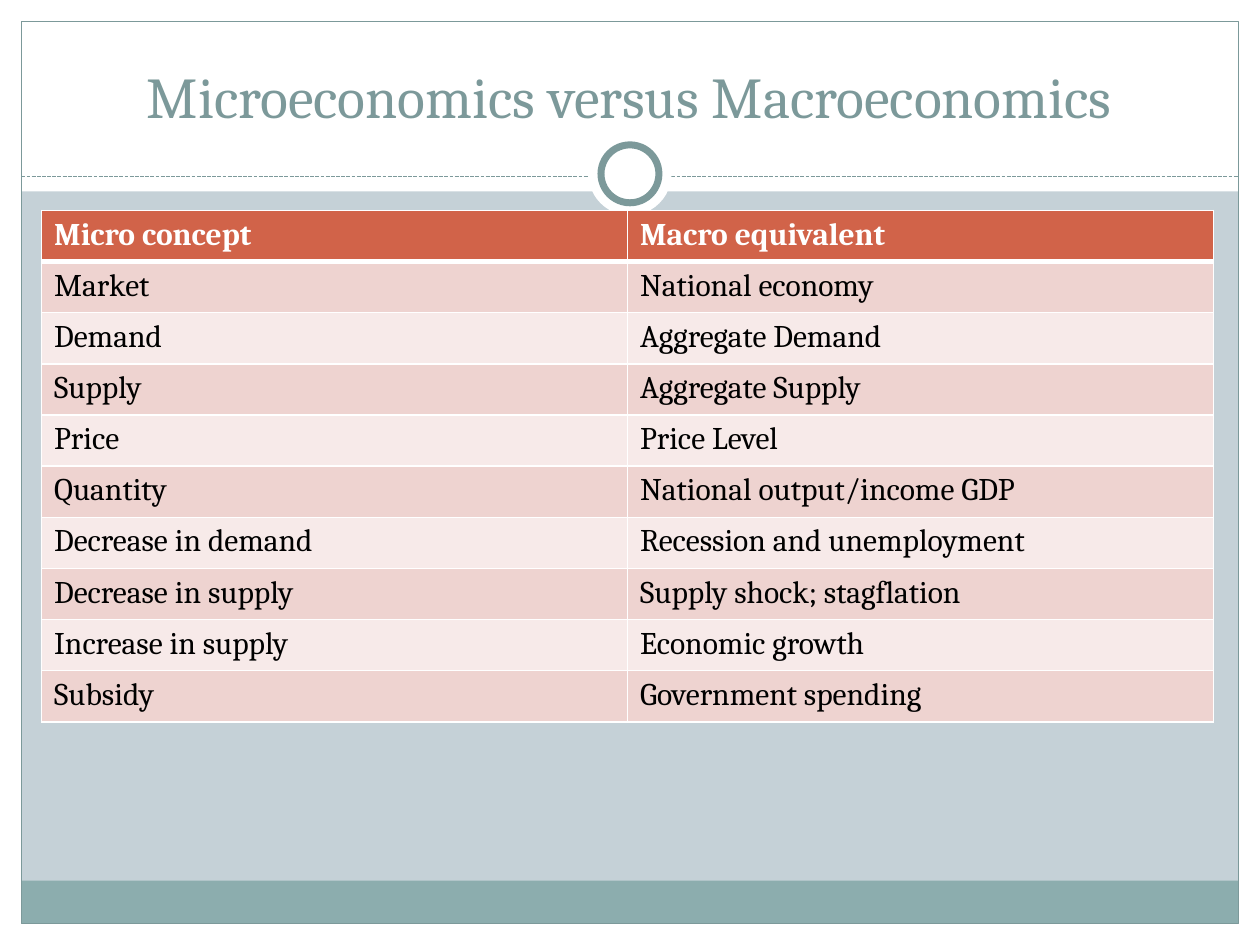
from lxml import etree
from pptx import Presentation
from pptx import util as u
from pptx.dml.color import RGBColor
from pptx.enum import dml, shapes, text
from pptx.oxml import ns

EMU_PER_PX = 9144  # 100 px to the inch
WIDTH, HEIGHT = 1000, 750
MARGIN = 17
WHITE, BLACK = "FFFFFF", "000000"
TEAL, PALE_TEAL, BACKDROP = "7C999A", "8CADAE", "C5D1D7"
HEADER, BANDS = "D16349", ("EED3D0", "F7EAE9")

CONCEPTS = [
    ("Micro concept", "Macro equivalent"),
    ("Market", "National economy"),
    ("Demand", "Aggregate Demand"),
    ("Supply", "Aggregate Supply"),
    ("Price", "Price Level"),
    ("Quantity", "National output/income GDP"),
    ("Decrease in demand", "Recession and unemployment"),
    ("Decrease in supply", "Supply shock; stagflation"),
    ("Increase in supply", "Economic growth"),
    ("Subsidy", "Government spending"),
]


def px(*lengths):
    return [u.Emu(length * EMU_PER_PX) for length in lengths]


def color(value):
    return RGBColor.from_string(value)


class SlideBuilder:
    """Holds the text style and the slide being drawn."""

    def __init__(self, page, font="Cambria"):
        self.page = page
        self.font = font

    def background(self, fill):
        self.page.background.fill.solid()
        self.page.background.fill.fore_color.rgb = color(fill)

    def shape(self, kind, at, fill=None, line=None, weight=0.75):
        shape = self.page.shapes.add_shape(kind, *px(*at))
        shape.shadow.inherit = False
        if fill:
            shape.fill.solid()
            shape.fill.fore_color.rgb = color(fill)
        else:
            shape.fill.background()
        if line:
            shape.line.color.rgb = color(line)
            shape.line.width = u.Pt(weight)
        else:
            shape.line.fill.background()

    def rectangle(self, *at, **style):
        self.shape(shapes.MSO_SHAPE.RECTANGLE, at, **style)

    def circle(self, center_x, center_y, size, **style):
        at = (center_x - size // 2, center_y - size // 2, size, size)
        self.shape(shapes.MSO_SHAPE.OVAL, at, **style)

    def dashed_line(self, start, end, stroke):
        line = self.page.shapes.add_connector(
            shapes.MSO_CONNECTOR.STRAIGHT, *px(*start, *end))
        line.line.color.rgb = color(stroke)
        line.line.width = u.Pt(0.75)
        line.line.dash_style = dml.MSO_LINE.SQUARE_DOT
        etree.SubElement(line._element.spPr, ns.qn("a:effectLst"))

    def format_text(self, frame, size, ink, bold=False):
        for para in frame.paragraphs:
            for span in para.runs:
                span.font.name = self.font
                span.font.size = u.Pt(size)
                span.font.bold = bold
                span.font.color.rgb = color(ink)

    def title(self, words, at, size, ink):
        box = self.page.shapes.add_textbox(*px(*at))
        frame = box.text_frame
        frame.word_wrap = True
        frame.vertical_anchor = text.MSO_ANCHOR.BOTTOM
        frame.text = words
        frame.paragraphs[0].alignment = text.PP_ALIGN.CENTER
        self.format_text(frame, size, ink)

    def cell_border(self, cell, side, weight):
        border = etree.SubElement(cell._tc.get_or_add_tcPr(), ns.qn(f"a:ln{side}"),
                                  w=str(u.Pt(weight)))
        fill = etree.SubElement(border, ns.qn("a:solidFill"))
        etree.SubElement(fill, ns.qn("a:srgbClr"), val=WHITE)

    def table(self, rows, at, size):
        table = self.page.shapes.add_table(len(rows), len(rows[0]), *px(*at)).table
        for r, row in enumerate(rows):
            is_header = r == 0
            # The rule below the header belongs to both adjoining rows
            weights = {"L": 1, "R": 1, "T": 3 if r == 1 else 1, "B": 3 if is_header else 1}
            for c, words in enumerate(row):
                cell = table.cell(r, c)
                for side, weight in weights.items():
                    self.cell_border(cell, side, weight)
                cell.fill.solid()
                cell.fill.fore_color.rgb = color(HEADER if is_header else BANDS[(r - 1) % 2])
                cell.text_frame.text = words
                self.format_text(cell.text_frame, size, WHITE if is_header else BLACK, is_header)


def main():
    deck = Presentation()
    deck.slide_width, deck.slide_height = px(WIDTH, HEIGHT)
    slide = SlideBuilder(deck.slides.add_slide(deck.slide_layouts[6]))
    right, bottom = WIDTH - MARGIN, HEIGHT - MARGIN
    inner_width = right - MARGIN

    # White margins and title area
    slide.background(BACKDROP)
    slide.rectangle(0, bottom, WIDTH, MARGIN, fill=WHITE)
    slide.rectangle(0, 0, WIDTH, 152, fill=WHITE)
    for left in (0, right):
        slide.rectangle(left, 0, MARGIN, HEIGHT, fill=WHITE)

    # Footer band and frame
    slide.rectangle(MARGIN, bottom - 34, inner_width, 34, fill=PALE_TEAL)
    slide.rectangle(MARGIN, MARGIN, inner_width, bottom - MARGIN, line=TEAL)

    # Divider with ring
    slide.dashed_line((MARGIN, 140), (right, 140), TEAL)
    slide.circle(WIDTH // 2, 138, 66, fill=WHITE)
    slide.circle(WIDTH // 2, 138, 46, fill=WHITE, line=TEAL, weight=4)

    # Title and comparison table
    slide.title("Microeconomics versus Macroeconomics", (33, 25, 933, 83), 33, TEAL)
    slide.table(CONCEPTS, (33, 167, 930, 406), 18)

    deck.save("out.pptx")


if __name__ == "__main__":
    main()
